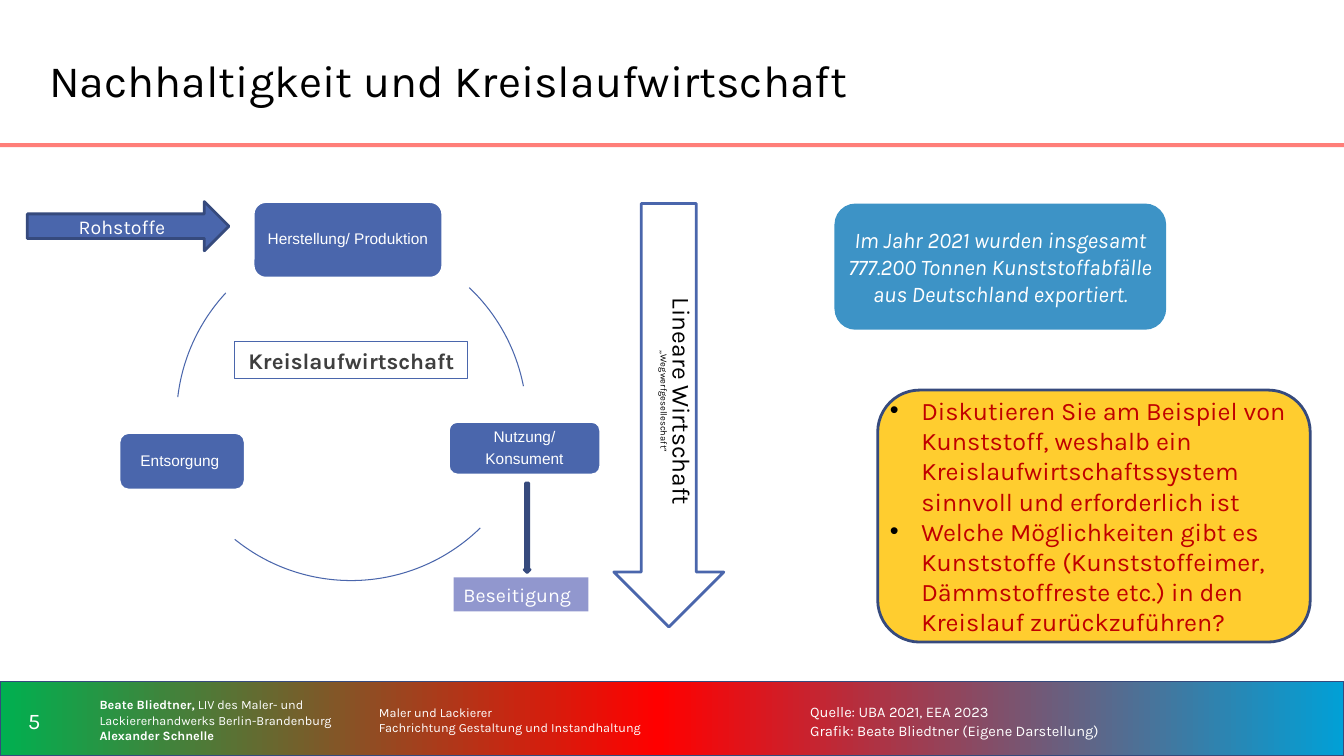
import copy
from dataclasses import dataclass

import pptx
import pptx.dml.color
import pptx.enum.shapes
import pptx.enum.text
import pptx.oxml.ns
import pptx.util
from lxml import etree

Cm = pptx.util.Cm
SHAPE = pptx.enum.shapes.MSO_SHAPE
ALIGN = pptx.enum.text.PP_ALIGN
ANCHOR = pptx.enum.text.MSO_ANCHOR
qn = pptx.oxml.ns.qn


@dataclass(frozen=True)
class Theme:
    font: str = "Karla"
    node_font: str = "Arial"
    white: str = "FFFFFF"
    black: str = "000000"
    blue: str = "4A66AC"
    navy: str = "364A7D"
    lilac: str = "9197CE"
    sky: str = "3D93C6"
    yellow: str = "FFCD2F"
    red: str = "C00000"
    coral: str = "FF7E79"
    grey: str = "3F3F3F"
    footer_stops: tuple = ((0, "00B050"), (0.49, "FF0000"), (1, "01A0D6"))
    title_size: float = 32
    question_size: float = 18
    linear_size: float = 17.6
    label_size: float = 16
    flow_size: float = 14
    node_size: float = 11
    source_size: float = 10.5
    footer_size: float = 9
    slogan_size: float = 6.7


THEME = Theme()
SMALL_INSETS = (0.13, 0.13)


@dataclass(frozen=True)
class Box:
    left: float
    top: float
    width: float
    height: float

    def inner(self, left, top, width, height):
        return Box(self.left + left, self.top + top, width, height)

    def lengths(self):
        return [Cm(v) for v in (self.left, self.top, self.width, self.height)]


def rgb(color):
    return pptx.dml.color.RGBColor.from_string(color)


def draw(slide, kind, box, fill=None, line=None, weight=2):
    shape = slide.shapes.add_shape(kind, *box.lengths())
    shape.shadow.inherit = False
    if fill:
        shape.fill.solid()
        shape.fill.fore_color.rgb = rgb(fill)
    else:
        shape.fill.background()
    if line:
        shape.line.color.rgb = rgb(line)
        shape.line.width = pptx.util.Pt(weight)
    else:
        shape.line.fill.background()
    return shape


def style(font, size, color, bold=None, italic=None, name=THEME.font):
    font.name, font.size, font.bold, font.italic = name, pptx.util.Pt(size), bold, italic
    font.color.rgb = rgb(color)


def write(shape, lines, size, color, align=ALIGN.LEFT, anchor=ANCHOR.MIDDLE,
          insets=(0.25, 0.13), bullet=False, spacing=None, **font):
    frame = shape.text_frame
    frame.word_wrap = True
    frame.vertical_anchor = anchor
    frame.margin_left = frame.margin_right = Cm(insets[0])
    frame.margin_top = frame.margin_bottom = Cm(insets[1])
    for index, line in enumerate(lines):
        paragraph = frame.paragraphs[0] if index == 0 else frame.add_paragraph()
        paragraph.text = line
        paragraph.alignment = align
        if spacing:
            paragraph.line_spacing = spacing
        if bullet:
            add_bullet(paragraph)
        style(paragraph.font, size, color, **font)
    return frame.paragraphs


def add_bullet(paragraph):
    properties = paragraph._p.get_or_add_pPr()
    properties.set("marL", str(Cm(0.79)))
    properties.set("indent", str(-Cm(0.79)))
    color = etree.SubElement(properties, qn("a:buClr"))
    etree.SubElement(color, qn("a:srgbClr")).set("val", THEME.black)
    etree.SubElement(properties, qn("a:buFont")).set("typeface", "Arial")
    etree.SubElement(properties, qn("a:buChar")).set("char", "•")


def text_box(slide, box, lines, size, color, **options):
    area = slide.shapes.add_textbox(*box.lengths())
    return area, write(area, lines, size, color, **options)


def header(slide, box):
    draw(slide, SHAPE.RECTANGLE, box.inner(0, box.height - 0.1, box.width, 0.1), THEME.coral)
    text_box(slide, box.inner(0.99, 0.51, 25, 3), ["Nachhaltigkeit und Kreislaufwirtschaft"],
             THEME.title_size, THEME.black)


def footer(slide, box):
    band = draw(slide, SHAPE.RECTANGLE, box, line=THEME.navy, weight=1)
    band.fill.gradient()
    band.fill.gradient_angle = 0
    stops = band._element.spPr.find(qn("a:gradFill")).find(qn("a:gsLst"))
    stops.append(copy.deepcopy(stops[0]))
    for stop, (position, color) in zip(band.fill.gradient_stops, THEME.footer_stops):
        stop.position = position
        stop.color.rgb = rgb(color)

    def column(left, width):
        return box.inner(left, 0.2, width, 1.55)

    text_box(slide, column(0, 1.73), ["5"], THEME.label_size, THEME.white, align=ALIGN.CENTER)
    text_box(slide, column(9.3, 10.64),
             ["Maler und Lackierer", "Fachrichtung Gestaltung und Instandhaltung"],
             THEME.footer_size, THEME.white)
    text_box(slide, column(20.17, 12.83),
             ["Quelle: UBA 2021, EEA 2023", "Grafik: Beate Bliedtner (Eigene Darstellung)"],
             THEME.source_size, THEME.white, spacing=1.1)
    _, (authors,) = text_box(slide, column(1.96, 7.06), [""], THEME.footer_size, THEME.white)
    authors._p.get_or_add_pPr().set("marL", str(Cm(0.3)))
    for words, bold in (("Beate Bliedtner, ", True),
                        ("LIV des Maler- und Lackiererhandwerks Berlin-Brandenburg ", False),
                        ("Alexander Schnelle", True)):
        run = authors.add_run()
        run.text = words
        style(run.font, THEME.footer_size, THEME.white, bold=bold)


def circular_economy(slide, box):
    stages = (
        ((5.69, 0, 4.78, 1.93), ["Herstellung/ Produktion"]),
        ((10.61, 5.54, 3.84, 1.35), ["Nutzung/", "Konsument"]),
        ((2.31, 5.82, 3.18, 1.45), ["Entsorgung "]),
    )
    for place, lines in stages:
        stage = draw(slide, SHAPE.ROUNDED_RECTANGLE, box.inner(*place), THEME.blue, THEME.white)
        paragraphs = write(stage, lines, THEME.node_size, THEME.white, align=ALIGN.CENTER,
                           insets=SMALL_INSETS, spacing=0.9, name=THEME.node_font)
        for paragraph in paragraphs[1:]:
            paragraph.space_before = pptx.util.Pt(3.9)

    diameter = 9.32
    for left, top, start, end in ((3.27, 0.89, 313.5, 348.9),
                                  (3.5, 0.23, 45.7, 129),
                                  (3.76, 0.81, 186.7, 222.8)):
        arc = draw(slide, SHAPE.ARC, box.inner(left, top, diameter, diameter),
                   line=THEME.blue, weight=0.75)
        arc.adjustments[0] = start * 0.6
        arc.adjustments[1] = end * 0.6

    raw_materials = draw(slide, SHAPE.RIGHT_ARROW, box.inner(0, 0, 5.08, 1.24),
                         THEME.blue, THEME.navy)
    write(raw_materials, ["Rohstoffe"], THEME.flow_size, THEME.white, align=ALIGN.CENTER)
    draw(slide, SHAPE.DOWN_ARROW, box.inner(12.52, 7.09, 0.15, 2.26), THEME.blue, THEME.navy)
    disposal = draw(slide, SHAPE.RECTANGLE, box.inner(10.74, 9.47, 3.4, 0.86), THEME.lilac)
    write(disposal, ["Beseitigung"], THEME.flow_size, THEME.white, anchor=ANCHOR.TOP)
    cycle_label = draw(slide, SHAPE.RECTANGLE, box.inner(5.23, 3.53, 5.87, 0.94),
                       line=THEME.blue, weight=0.75)
    write(cycle_label, ["Kreislaufwirtschaft"], THEME.label_size, THEME.grey,
          align=ALIGN.CENTER, anchor=ANCHOR.TOP, bold=True)


def linear_economy(slide, box):
    draw(slide, SHAPE.DOWN_ARROW, box, THEME.white, THEME.blue)
    length, depth = 9.98, 1.4
    caption, paragraphs = text_box(
        slide, box.inner((box.width - length) / 2, 4.29, length, depth),
        ["Lineare Wirtschaft", "„Wegwerfgeselleschaft“"], THEME.linear_size, THEME.black,
        align=ALIGN.CENTER, anchor=ANCHOR.TOP, spacing=0.8)
    caption.rotation = 90
    paragraphs[1].font.size = pptx.util.Pt(THEME.slogan_size)


def discussion(slide, box):
    fact = draw(slide, SHAPE.ROUNDED_RECTANGLE, box.inner(0, 0, 8.36, 3.18), THEME.sky)
    write(fact, ["Im Jahr 2021 wurden insgesamt 777.200 Tonnen Kunststoffabfälle "
                 "aus Deutschland exportiert."],
          THEME.label_size, THEME.white, align=ALIGN.CENTER, insets=(0, 0), italic=True)
    questions = draw(slide, SHAPE.ROUNDED_RECTANGLE, box.inner(1.09, 4.7, 10.9, 6.35),
                     THEME.yellow, THEME.navy)
    write(questions,
          ["Diskutieren Sie am Beispiel von Kunststoff, weshalb ein "
           "Kreislaufwirtschaftssystem sinnvoll und erforderlich ist",
           "Welche Möglichkeiten gibt es Kunststoffe (Kunststoffeimer, Dämmstoffreste etc.) "
           "in den Kreislauf zurückzuführen?"],
          THEME.question_size, THEME.red, insets=(0, 0), bullet=True)


def main():
    deck = pptx.Presentation()
    deck.slide_width, deck.slide_height = Cm(33.87), Cm(19.05)
    slide = deck.slides.add_slide(deck.slide_layouts[6])
    header(slide, Box(0, 0, 33.87, 3.71))
    footer(slide, Box(0, 17.17, 33.87, 1.88))
    circular_economy(slide, Box(0.69, 5.08, 14.45, 10.33))
    linear_economy(slide, Box(15.47, 5.13, 2.77, 10.67))
    discussion(slide, Box(21.03, 5.13, 11.99, 11.05))
    deck.save("out.pptx")


if __name__ == "__main__":
    main()
